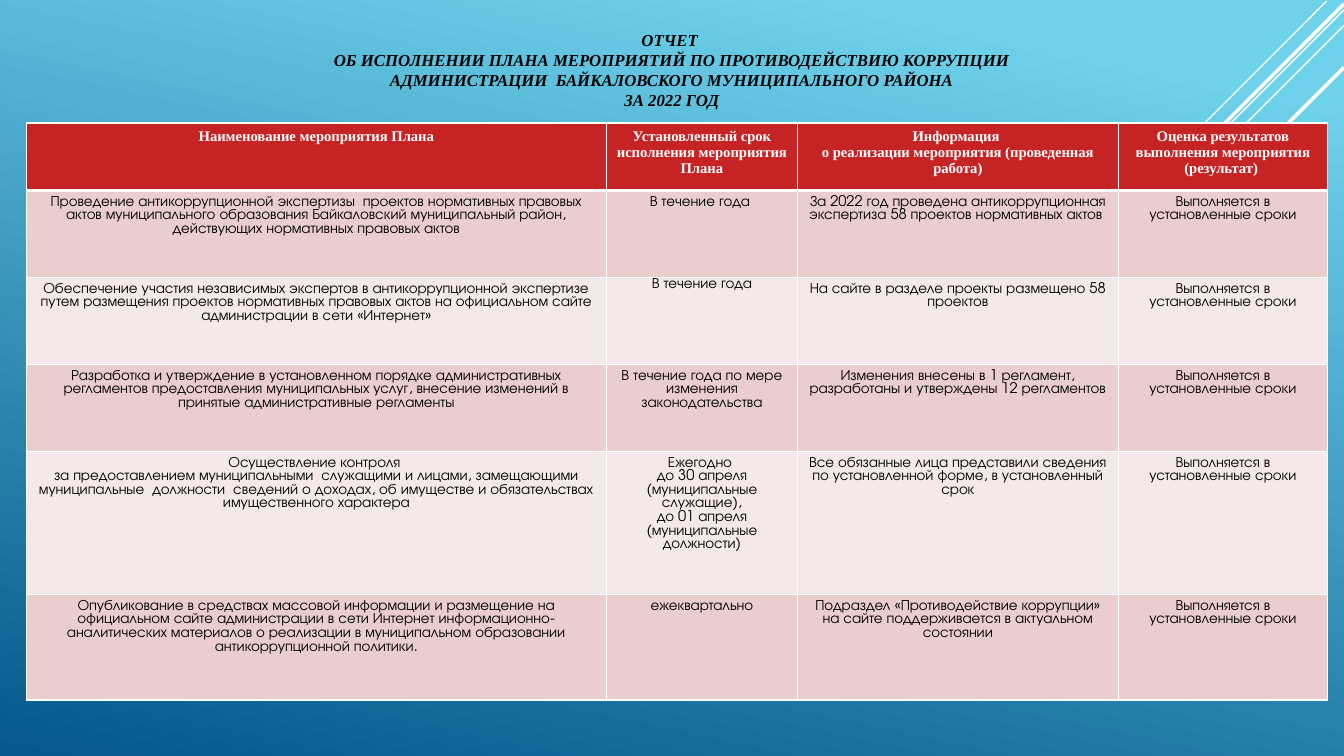
import pptx
import pptx.util
import pptx.dml.color
import pptx.enum.shapes
import pptx.enum.text
import pptx.oxml
import pptx.oxml.ns

Cm, Pt = pptx.util.Cm, pptx.util.Pt
RGBColor = pptx.dml.color.RGBColor
MIDDLE = pptx.enum.text.PP_ALIGN.CENTER

SKY = RGBColor(0x6E, 0xD2, 0xEB)
SEA = RGBColor(0x06, 0x58, 0x8E)
WHITE = RGBColor(0xFF, 0xFF, 0xFF)
BLACK = RGBColor(0x00, 0x00, 0x00)
RED = RGBColor(0xC6, 0x23, 0x24)
PINK = RGBColor(0xEA, 0xCD, 0xCD)
PALE = RGBColor(0xF5, 0xE8, 0xE8)

TITLE = "\v".join([
    "ОТЧЕТ ",
    "ОБ ИСПОЛНЕНИИ ПЛАНА МЕРОПРИЯТИЙ ПО ПРОТИВОДЕЙСТВИЮ КОРРУПЦИИ",
    "АДМИНИСТРАЦИИ  БАЙКАЛОВСКОГО МУНИЦИПАЛЬНОГО РАЙОНА",
    "ЗА 2022 ГОД",
])
HEADER = [
    "Наименование мероприятия Плана",
    "Установленный срок исполнения мероприятия Плана",
    "Информация \vо реализации мероприятия (проведенная работа)",
    "Оценка результатов выполнения мероприятия (результат) ",
]
RESULT = "Выполняется в установленные сроки"
MEASURES = [
    ("Проведение антикоррупционной экспертизы  проектов нормативных правовых актов муниципального "
     "образования Байкаловский муниципальный район, действующих нормативных правовых актов",
     "В течение года ",
     "За 2022 год проведена антикоррупционная экспертиза 58 проектов нормативных актов "),
    ("Обеспечение участия независимых экспертов в антикоррупционной экспертизе путем размещения "
     "проектов нормативных правовых актов на официальном сайте администрации в сети «Интернет»",
     "В течение года",
     "На сайте в разделе проекты размещено 58 проектов"),
    ("Разработка и утверждение в установленном порядке административных регламентов предоставления "
     "муниципальных услуг, внесение изменений в принятые административные регламенты",
     "В течение года по мере изменения законодательства",
     "Изменения внесены в 1 регламент, разработаны и утверждены 12 регламентов"),
    ("Осуществление контроля \nза предоставлением муниципальными  служащими и лицами, замещающими "
     "муниципальные  должности  сведений о доходах, об имуществе и обязательствах имущественного характера",
     "Ежегодно \nдо 30 апреля (муниципальные служащие),\nдо 01 апреля\n(муниципальные должности)",
     "Все обязанные лица представили сведения по установленной форме, в установленный срок"),
    ("Опубликование в средствах массовой информации и размещение на официальном сайте администрации "
     "в сети Интернет информационно-аналитических материалов о реализации в муниципальном образовании "
     "антикоррупционной политики.",
     "ежеквартально",
     "Подраздел «Противодействие коррупции» на сайте поддерживается в актуальном состоянии"),
]
COLUMN_WIDTHS = [14.63, 4.8, 8.1, 5.26]
ROW_HEIGHTS = [1.7, 2.19, 2.19, 2.19, 3.61, 2.66]
RAYS = [
    (33.43, 0.03, 10.57, 1),
    (33.87, 0.25, 16.89, 1),
    (33.87, 0.64, 13.77, 1),
    (33.87, 0.1, 13.49, 2.5),
    (33.87, 1.7, 12.07, 2.5),
]
TITLE_FONT = {"name": "Times New Roman", "size": Pt(12), "bold": True, "italic": True}
HEADER_FONT = {"name": "Times New Roman", "size": Pt(10.5), "bold": True}
BODY_FONT = {"name": "TeX Gyre Adventor", "size": Pt(10.5), "bold": False}
TIGHT_MARGINS = {"margin_left": Cm(0.18), "margin_top": 0, "margin_right": Cm(0.18), "margin_bottom": 0}


def set_all(target, values):
    for name, value in values.items():
        setattr(target, name, value)


def write(text_frame, text, font, color):
    text_frame.text = text
    for paragraph in text_frame.paragraphs:
        paragraph.alignment = MIDDLE
        for run in paragraph.runs:
            set_all(run.font, font)
            run.font.color.rgb = color


def add_borders(cell, widths):
    properties = cell._tc.get_or_add_tcPr()
    for position, (side, width) in enumerate(widths.items()):
        properties.insert(position, pptx.oxml.parse_xml(
            f'<a:{side} {pptx.oxml.ns.nsdecls("a")} w="{Pt(width)}"><a:solidFill>'
            f'<a:srgbClr val="{WHITE}"/></a:solidFill></a:{side}>'))


def paint_background(slide):
    fill = slide.background.fill
    fill.gradient()
    fill.gradient_angle = 258
    for stop, color, position in zip(fill.gradient_stops, (SKY, SEA), (0.1, 1)):
        stop.color.rgb = color
        stop.position = position


def add_rays(slide):
    for x, y, reach, width in RAYS:
        ray = slide.shapes.add_connector(
            pptx.enum.shapes.MSO_CONNECTOR.STRAIGHT, Cm(x), Cm(y), Cm(x - reach), Cm(y + reach))
        ray.line.color.rgb = WHITE
        ray.line.width = Pt(width)
        ray._element.spPr.append(pptx.oxml.parse_xml(f'<a:effectLst {pptx.oxml.ns.nsdecls("a")}/>'))


def add_title(slide):
    title = slide.shapes.title
    set_all(title, {"left": Cm(7.47), "top": Cm(0.33), "width": Cm(18.92), "height": Cm(2.57)})
    set_all(title.text_frame, {"word_wrap": True, "auto_size": pptx.enum.text.MSO_AUTO_SIZE.NONE,
                               "vertical_anchor": pptx.enum.text.MSO_ANCHOR.BOTTOM})
    write(title.text_frame, TITLE, TITLE_FONT, BLACK)


def add_plan(slide):
    rows = [HEADER] + [[*measure, RESULT] for measure in MEASURES]
    table = slide.shapes.add_table(
        len(rows), len(HEADER), Cm(0.66), Cm(3.1), Cm(sum(COLUMN_WIDTHS)), Cm(sum(ROW_HEIGHTS))).table
    for column, width in zip(table.columns, COLUMN_WIDTHS):
        column.width = Cm(width)
    for index, (row, height, texts) in enumerate(zip(table.rows, ROW_HEIGHTS, rows)):
        row.height = Cm(height)
        is_header = index == 0
        fill = RED if is_header else PINK if index % 2 else PALE
        font, color = (HEADER_FONT, WHITE) if is_header else (BODY_FONT, BLACK)
        borders = {"lnL": 1, "lnR": 1, "lnT": 3 if index == 1 else 1, "lnB": 3 if is_header else 1}
        for cell, text in zip(row.cells, texts):
            cell.fill.solid()
            cell.fill.fore_color.rgb = fill
            add_borders(cell, borders)
            write(cell.text_frame, text, font, color)
    set_all(table.cell(2, 1), TIGHT_MARGINS)


def main():
    presentation = pptx.Presentation()
    set_all(presentation, {"slide_width": Cm(33.87), "slide_height": Cm(19.05)})
    slide = presentation.slides.add_slide(presentation.slide_layouts[5])
    paint_background(slide)
    add_rays(slide)
    add_title(slide)
    add_plan(slide)
    presentation.save("out.pptx")


if __name__ == "__main__":
    main()
